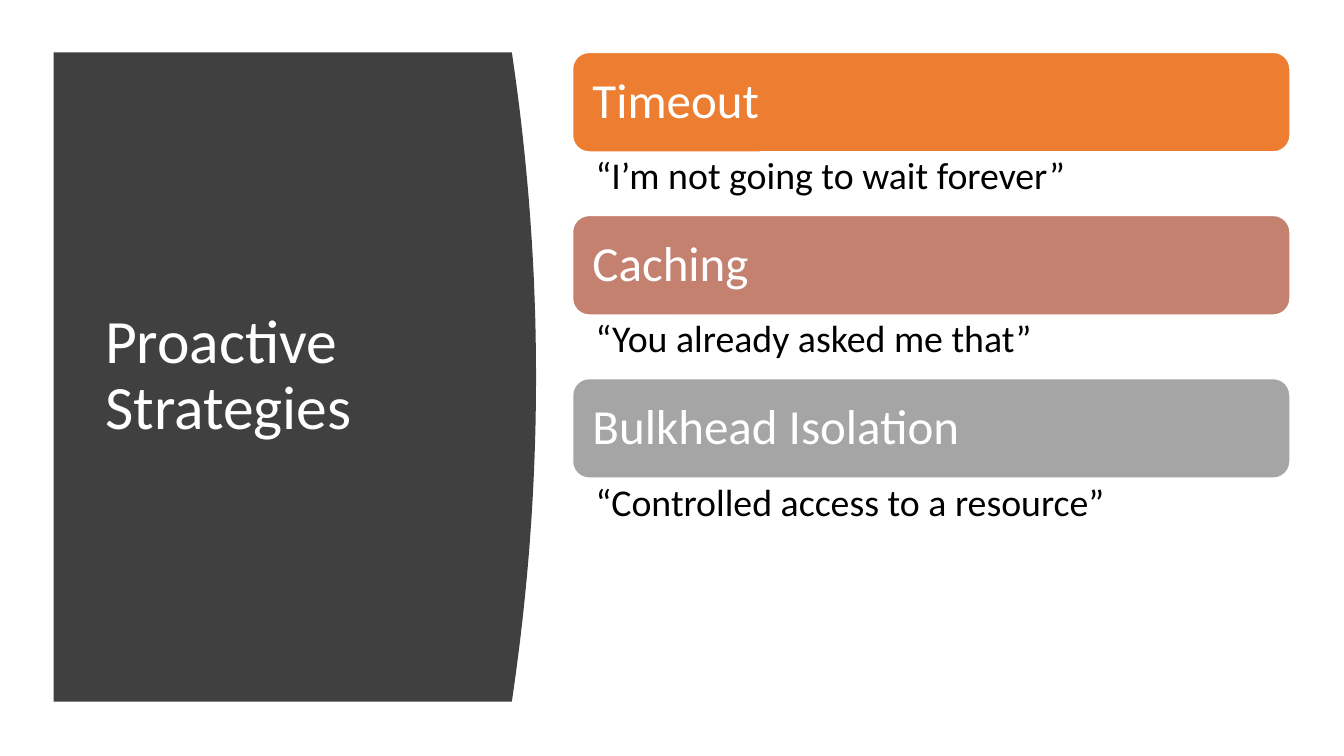
"""Build the slide on proactive strategies."""
from dataclasses import dataclass

from pptx import Presentation
from pptx.dml.color import RGBColor
from pptx.enum.shapes import MSO_SHAPE
from pptx.enum.text import MSO_ANCHOR, PP_ALIGN
from pptx.slide import Slide
from pptx.text.text import TextFrame
from pptx.util import Cm, Pt

ROUND = MSO_SHAPE.ROUNDED_RECTANGLE
MIDDLE, TOP = MSO_ANCHOR.MIDDLE, MSO_ANCHOR.TOP
LEFT = PP_ALIGN.LEFT
WHITE = RGBColor(0xFF, 0xFF, 0xFF)
BLACK = RGBColor(0x00, 0x00, 0x00)
DARK = RGBColor(0x40, 0x40, 0x40)
ORANGE = RGBColor(0xED, 0x7D, 0x31)
ROSE = RGBColor(0xC4, 0x81, 0x70)
GREY = RGBColor(0xA5, 0xA5, 0xA5)
FONT = "Calibri"

PANEL_X, PANEL_Y, PANEL_H = 1.35, 1.32, 16.36
EDGE_X, BULGE, STEPS = 12.9, 0.61, 48
BAR_X, BAR_Y, BAR_W, BAR_H = 14.43, 1.32, 18.08, 2.51
QUOTE_H, PITCH = 1.6, 4.11


@dataclass(frozen=True)
class Topic:
    """A strategy with its motto and bar colour."""
    name: str
    quote: str
    color: RGBColor


TOPICS = [
    Topic("Timeout", "“I’m not going to wait forever”", ORANGE),
    Topic("Caching", "“You already asked me that”", ROSE),
    Topic("Bulkhead Isolation", "“Controlled access to a resource”", GREY),
]


def write(frame: TextFrame, lines: list[str], size: int, color: RGBColor,
          anchor: MSO_ANCHOR, pads: tuple[float, float, float, float]) -> None:
    """Fill a frame with one paragraph of lines, padded left, top, right, bottom."""
    frame.word_wrap = True
    frame.vertical_anchor = anchor
    frame.margin_left, frame.margin_top, frame.margin_right, frame.margin_bottom = map(Cm, pads)
    para = frame.paragraphs[0]
    para.alignment = LEFT
    para.line_spacing = 0.9
    for i, line in enumerate(lines):
        if i:
            para.add_line_break()
        run = para.add_run()
        run.text = line
        run.font.name = FONT
        run.font.size = Pt(size)
        run.font.color.rgb = color


def draw_panel(slide: Slide) -> None:
    """Draw the dark panel with its bowed right edge and the title."""
    curve = []
    for i in range(STEPS + 1):
        part = i / STEPS
        x = EDGE_X + BULGE * (1 - (2 * part - 1) ** 2)
        curve.append((Cm(x), Cm(PANEL_Y + PANEL_H * part)))
    form = slide.shapes.build_freeform(Cm(PANEL_X), Cm(PANEL_Y))
    form.add_line_segments(curve + [(Cm(PANEL_X), Cm(PANEL_Y + PANEL_H))], close=True)
    panel = form.convert_to_shape()
    panel.shadow.inherit = False
    panel.fill.solid()
    panel.fill.fore_color.rgb = DARK
    panel.line.fill.background()
    title = slide.shapes.add_textbox(Cm(2.4), Cm(2.82), Cm(9.5), Cm(13.34))
    write(title.text_frame, ["Proactive", "Strategies"], 44, WHITE, MIDDLE,
          (0.25, 0.13, 0.25, 0.13))


def draw_topic(slide: Slide, topic: Topic, top: float) -> None:
    """Draw a topic bar with its quote below."""
    bar = slide.shapes.add_shape(ROUND, Cm(BAR_X), Cm(top), Cm(BAR_W), Cm(BAR_H))
    bar.shadow.inherit = False
    bar.fill.solid()
    bar.fill.fore_color.rgb = topic.color
    bar.line.color.rgb = WHITE
    bar.line.width = Pt(1)
    write(bar.text_frame, [topic.name], 35, WHITE, MIDDLE, (0.38, 0.38, 0.38, 0.38))
    quote = slide.shapes.add_textbox(Cm(BAR_X), Cm(top + BAR_H), Cm(BAR_W), Cm(QUOTE_H))
    write(quote.text_frame, [topic.quote], 27, BLACK, TOP, (0.58, 0.13, 0.69, 0.13))


def main() -> None:
    """Build and save the deck."""
    deck = Presentation()
    deck.slide_width, deck.slide_height = Cm(33.87), Cm(19.05)
    slide = deck.slides.add_slide(deck.slide_layouts[6])
    draw_panel(slide)
    for i, topic in enumerate(TOPICS):
        draw_topic(slide, topic, BAR_Y + i * PITCH)
    deck.save("out.pptx")


if __name__ == "__main__":
    main()
